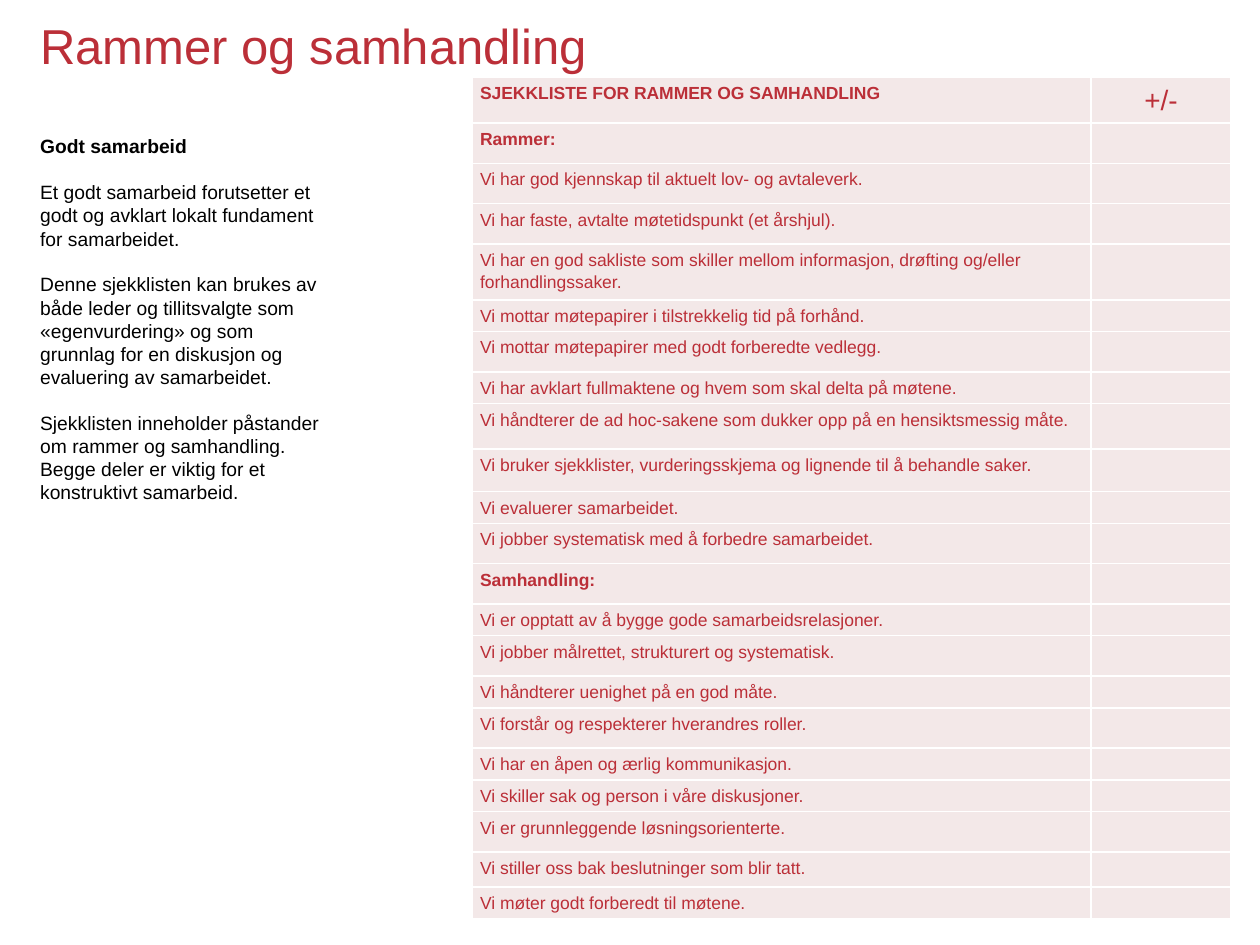
from lxml import etree
from pptx import Presentation
from pptx import util as u
from pptx.dml.color import RGBColor
from pptx.enum import text
from pptx.oxml.ns import qn

TALL, SHORT = 0.32, 0.25

INTRO = [
    "Godt samarbeid",
    "Et godt samarbeid forutsetter et godt og avklart lokalt fundament for samarbeidet.",
    "Denne sjekklisten kan brukes av både leder og tillitsvalgte som «egenvurdering» "
    "og som grunnlag for en diskusjon og evaluering av samarbeidet.",
    "Sjekklisten inneholder påstander om rammer og samhandling. "
    "Begge deler er viktig for et konstruktivt samarbeid.",
]

CHECKLIST = [
    ("SJEKKLISTE FOR RAMMER OG SAMHANDLING", 0.36),
    ("Rammer:", TALL),
    ("Vi har god kjennskap til aktuelt lov- og avtaleverk.", TALL),
    ("Vi har faste, avtalte møtetidspunkt (et årshjul).", TALL),
    ("Vi har en god sakliste som skiller mellom informasjon, drøfting og/eller "
     "forhandlingssaker.", 0.44),
    ("Vi mottar møtepapirer i tilstrekkelig tid på forhånd.", SHORT),
    ("Vi mottar møtepapirer med godt forberedte vedlegg.", TALL),
    ("Vi har avklart fullmaktene og hvem som skal delta på møtene.", SHORT),
    ("Vi håndterer de ad hoc-sakene som dukker opp på en hensiktsmessig måte.", 0.36),
    ("Vi bruker sjekklister, vurderingsskjema og lignende til å behandle saker.", 0.34),
    ("Vi evaluerer samarbeidet.", SHORT),
    ("Vi jobber systematisk med å forbedre samarbeidet.", TALL),
    ("Samhandling:", TALL),
    ("Vi er opptatt av å bygge gode samarbeidsrelasjoner.", SHORT),
    ("Vi jobber målrettet, strukturert og systematisk.", TALL),
    ("Vi håndterer uenighet på en god måte.", SHORT),
    ("Vi forstår og respekterer hverandres roller.", TALL),
    ("Vi har en åpen og ærlig kommunikasjon.", SHORT),
    ("Vi skiller sak og person i våre diskusjoner.", SHORT),
    ("Vi er grunnleggende løsningsorienterte.", TALL),
    ("Vi stiller oss bak beslutninger som blir tatt.", 0.28),
    ("Vi møter godt forberedt til møtene.", SHORT),
]
HEADINGS = {"SJEKKLISTE FOR RAMMER OG SAMHANDLING", "Rammer:", "Samhandling:"}


def color(value):
    return RGBColor.from_string(value)


class SlideBuilder:
    font_name = "Arial"
    red, black, pink, white = "BB2F38", "000000", "F3E8E8", "FFFFFF"

    def __init__(self, slide):
        self.slide = slide

    def format_runs(self, paragraph, size, fill, bold=False):
        for run in paragraph.runs:
            run.font.name = self.font_name
            run.font.size = u.Pt(size)
            run.font.bold = bold
            run.font.color.rgb = color(fill)

    def title(self, words, left, top, width, height):
        shape = self.slide.shapes.title
        shape.left, shape.top = u.Inches(left), u.Inches(top)
        shape.width, shape.height = u.Inches(width), u.Inches(height)
        frame = shape.text_frame
        frame.text = words
        frame.vertical_anchor = text.MSO_ANCHOR.MIDDLE
        frame.paragraphs[0].alignment = text.PP_ALIGN.LEFT
        self.format_runs(frame.paragraphs[0], 28, self.red)

    def text_box(self, paragraphs, left, top, width, height):
        """Add a text box whose first paragraph is a bold heading."""
        shape = self.slide.shapes.add_textbox(
            u.Inches(left), u.Inches(top), u.Inches(width), u.Inches(height))
        frame = shape.text_frame
        frame.word_wrap = True
        frame.text = "\n".join(paragraphs)
        for index, paragraph in enumerate(frame.paragraphs):
            if index:
                paragraph.space_before = u.Pt(13)
            self.format_runs(paragraph, 11, self.black, bold=index == 0)

    def table(self, rows, widths, left, top):
        """Add a checklist table with an empty marking column."""
        height = sum(row_height for _, row_height in rows)
        table = self.slide.shapes.add_table(
            len(rows), len(widths), u.Inches(left), u.Inches(top),
            u.Inches(sum(widths)), u.Inches(height)).table
        for column, width in zip(table.columns, widths):
            column.width = u.Inches(width)
        for index, (words, row_height) in enumerate(rows):
            table.rows[index].height = u.Inches(row_height)
            self.cell(table.cell(index, 0), words, bold=words in HEADINGS)
            self.cell(table.cell(index, 1))
        mark = table.cell(0, 1)
        self.cell(mark, "+/-", size=16)
        mark.text_frame.paragraphs[0].alignment = text.PP_ALIGN.CENTER

    def cell(self, cell, words="", size=10, bold=False):
        cell.margin_left = cell.margin_right = u.Inches(0.06)
        cell.margin_top = cell.margin_bottom = u.Inches(0.03)
        self.borders(cell)
        cell.fill.solid()
        cell.fill.fore_color.rgb = color(self.pink)
        paragraph = cell.text_frame.paragraphs[0]
        if words:
            paragraph.text = words
            paragraph.line_spacing = 1.15
            self.format_runs(paragraph, size, self.red, bold)
        else:
            # Keeps an empty cell from stretching its row
            etree.SubElement(paragraph._p, qn("a:endParaRPr"), sz=str(size * 100))

    def borders(self, cell):
        properties = cell._tc.get_or_add_tcPr()
        for child in list(properties):
            properties.remove(child)
        for side in ("lnL", "lnR", "lnT", "lnB"):
            line = etree.SubElement(properties, qn(f"a:{side}"), w=str(u.Pt(1)))
            fill = etree.SubElement(line, qn("a:solidFill"))
            etree.SubElement(fill, qn("a:srgbClr"), val=self.white)


def main():
    presentation = Presentation()
    presentation.slide_width = u.Inches(10)
    presentation.slide_height = u.Inches(7.5)
    title_only = presentation.slide_layouts[5]
    builder = SlideBuilder(presentation.slides.add_slide(title_only))
    builder.title("Rammer og samhandling", 0.22, 0, 9, 0.71)
    builder.text_box(INTRO, 0.22, 1.02, 2.51, 3.06)
    builder.table(CHECKLIST, [4.91, 1.11], 3.75, 0.61)
    presentation.save("out.pptx")


if __name__ == "__main__":
    main()
